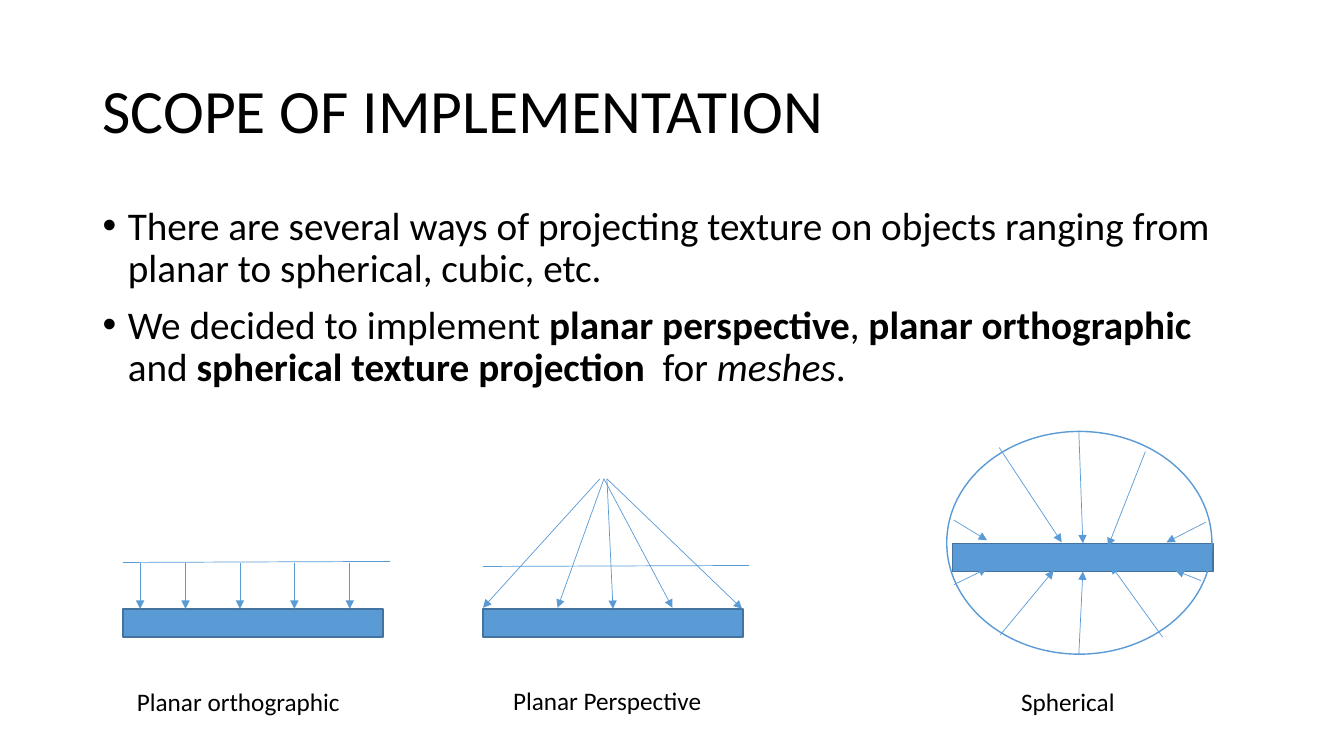
from lxml.etree import SubElement
from pptx import Presentation
from pptx.dml.color import RGBColor
from pptx.enum.shapes import MSO_CONNECTOR, MSO_SHAPE
from pptx.enum.text import MSO_ANCHOR
from pptx.oxml.ns import qn
from pptx.util import Inches, Pt

CELL = Inches(0.1)
BLUE, DARK_BLUE, BLACK = "5B9BD5", "43739E", "000000"
TOP, BOTTOM = 0, 2

deck = Presentation()
deck.slide_width, deck.slide_height = Inches(13.33), Inches(7.5)
slide = deck.slides.add_slide(deck.slide_layouts[6])


def cells(*counts):
    return [round(count * CELL) for count in counts]


def paint(color_format, color):
    color_format.rgb = RGBColor.from_string(color)


statements = [
    [("There are several ways of projecting texture on objects ranging from "
      "planar to spherical, cubic, etc.", "")],
    [("We decided to implement ", ""), ("planar perspective", "b"), (", ", ""),
     ("planar orthographic", "b"), (" and ", ""),
     ("spherical texture projection ", "b"), (" for ", ""),
     ("meshes", "i"), (".", "")],
]
texts = [
    ("heading", (9.2, 4, 115, 14.5), 44, [[("SCOPE OF IMPLEMENTATION", "")]]),
    ("bullets", (9.2, 20, 115, 21.4), 28, statements),
    ("caption", (12.6, 67.6, 22.4, 4), 18, [[("Planar orthographic", "")]]),
    ("caption", (49.9, 67.5, 20.9, 4), 18, [[("Planar Perspective", "")]]),
    ("caption", (100.3, 67.6, 11.4, 4), 18, [[("Spherical", "")]]),
]
for role, area, size, paragraphs in texts:
    frame = slide.shapes.add_textbox(*cells(*area)).text_frame
    frame.word_wrap = role != "caption"
    if role == "heading":
        frame.vertical_anchor = MSO_ANCHOR.MIDDLE
    for number, pieces in enumerate(paragraphs):
        paragraph = frame.add_paragraph() if number else frame.paragraphs[0]
        if role != "caption":
            paragraph.line_spacing = 0.9
        if role == "bullets":
            paragraph.space_before = Pt(10)
            properties = paragraph._p.get_or_add_pPr()
            properties.set("marL", str(Inches(0.25)))
            properties.set("indent", str(-Inches(0.25)))
            SubElement(properties, qn("a:buFont"), typeface="Arial")
            SubElement(properties, qn("a:buChar"), char="•")
        for wording, style in pieces:
            run = paragraph.add_run()
            run.text = wording
            run.font.name, run.font.size = "Calibri", Pt(size)
            run.font.bold, run.font.italic = style == "b", style == "i"
            paint(run.font.color, BLACK)

orthographic_rays = [(x, 55.9, x, 60.4, None)
                     for x in (13.9, 18.4, 23.8, 29.2, 34.7)]
perspective_rays = [
    (59.5, 47.5, 47.9, 60.3, None), (59.9, 47.5, 55.3, 60.3, None),
    (60.2, 47.5, 60.7, 60.4, TOP), (59.9, 47.5, 66.7, 60.3, None),
    (60.2, 47.5, 73.6, 60.4, None),
]
spherical_rays = [
    (99.1, 44.4, 105.3, 53.8, None), (107, 42.8, 107.4, 53.8, TOP),
    (119.6, 51.8, 115.7, 53.8, None), (115.3, 63.2, 110.2, 56.1, None),
    (113.6, 44.8, 109.9, 54.2, None), (94.6, 51.6, 97.9, 53.6, None),
    (119.1, 57.6, 116.6, 56.6, None), (94.6, 58, 97.9, 56.4, None),
    (107, 64.9, 107.2, 56.6, BOTTOM), (99.2, 63, 104.5, 56.6, None),
]
projections = [
    ((12.2, 60.4), (12.2, 55.8, 38.7, 55.7, None), orthographic_rays),
    ((47.9, 60.4), (47.9, 56.2, 74.3, 56.1, None), perspective_rays),
    ((94.5, 53.9), None, spherical_rays),
]
for corner, plane, rays in projections:
    surface = slide.shapes.add_shape(MSO_SHAPE.RECTANGLE, *cells(*corner, 25.8, 2.8))
    surface.shadow.inherit = False
    surface.fill.solid()
    paint(surface.fill.fore_color, BLUE)
    paint(surface.line.color, DARK_BLUE)
    surface.line.width = Pt(1)

    if plane is None:
        sphere = slide.shapes.add_shape(MSO_SHAPE.OVAL, *cells(93.9, 42.8, 26.3, 22.1))
        sphere.shadow.inherit = False
        sphere.fill.background()
        paint(sphere.line.color, BLUE)
        sphere.line.width = Pt(1)

    for stroke in ([plane] if plane else []) + rays:
        *ends, side = stroke
        ray = slide.shapes.add_connector(MSO_CONNECTOR.STRAIGHT, *cells(*ends))
        if side is not None:
            ray.end_connect(surface, side)
        paint(ray.line.color, BLUE)
        ray.line.width = Pt(0.5)
        if stroke != plane:
            SubElement(ray.line._get_or_add_ln(), qn("a:tailEnd"), type="triangle")
        SubElement(ray._element.spPr, qn("a:effectLst"))

deck.save("out.pptx")
